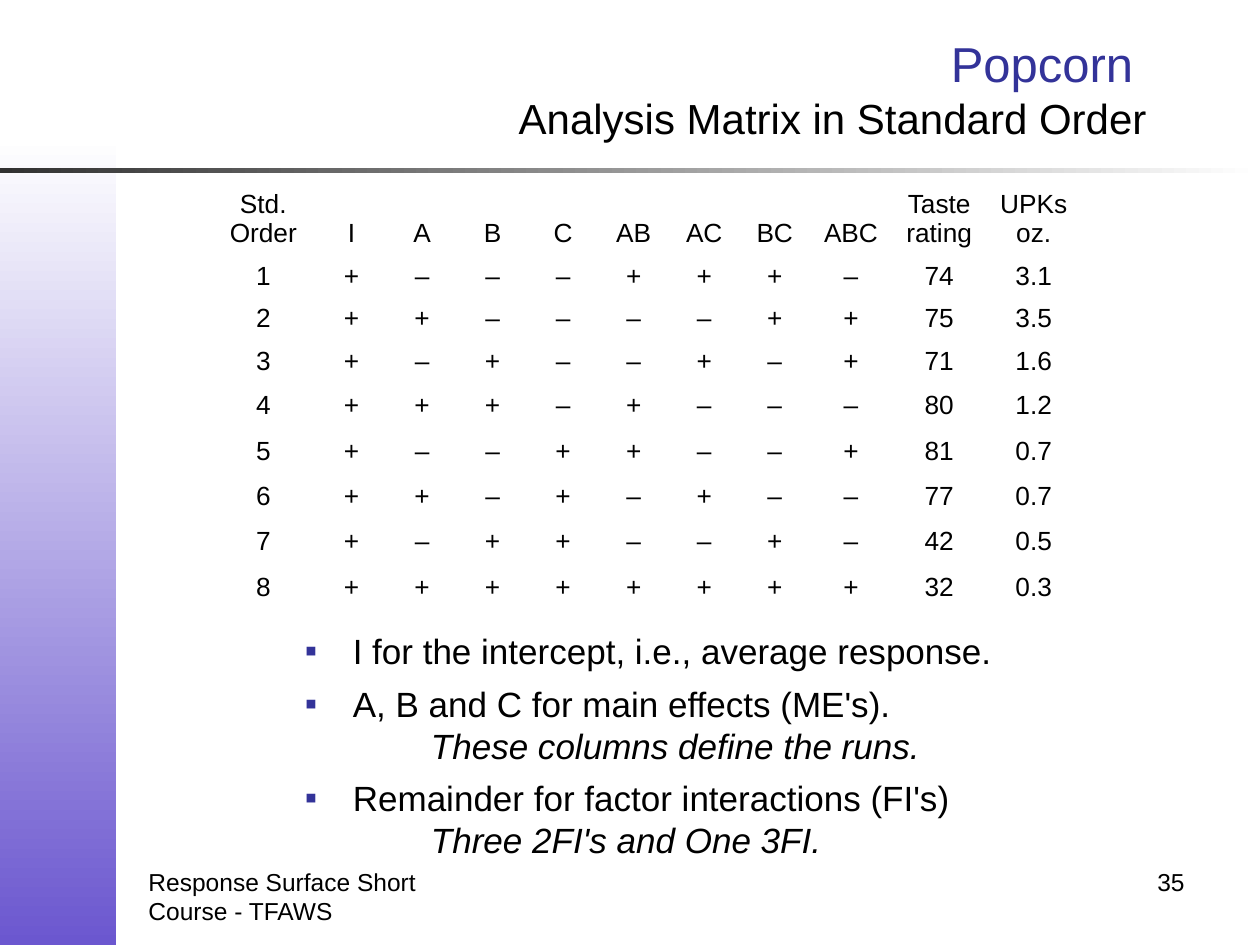
"""Builds the popcorn analysis matrix slide."""
from lxml import etree
from pptx import Presentation
from pptx import util as u
from pptx.dml.color import RGBColor
from pptx.enum import shapes, text
from pptx.oxml import ns

COLORS = {"ink": "000000", "accent": "333399", "white": "FFFFFF",
          "violet": "6B57CF", "charcoal": "313131"}
EFFECTS = ["I", "A", "B", "C", "AB", "AC", "BC", "ABC"]
RESULTS = [(74, 3.1), (75, 3.5), (71, 1.6), (80, 1.2),
           (81, 0.7), (77, 0.7), (42, 0.5), (32, 0.3)]
NOTES = [
    ("I for the intercept, i.e., average response.", None),
    ("A, B and C for main effects (ME's).", "These columns define the runs."),
    ("Remainder for factor interactions (FI's)", "Three 2FI's and One 3FI."),
]


def color(name):
    return RGBColor.from_string(COLORS[name])


def sign(run, effect):
    """Return the sign of an effect: the product of its factors' levels."""
    lows = sum(not run >> "ABC".index(factor) & 1 for factor in effect if factor != "I")
    return "–" if lows % 2 else "+"


class SlideBuilder:
    """Holds the style and the slide being built."""

    font_name = "Arial"

    def __init__(self, slide):
        self.slide = slide

    def style(self, font, size, name="ink", italic=None):
        font.name, font.size, font.italic = self.font_name, u.Pt(size), italic
        font.color.rgb = color(name)

    def place(self, shape, box):
        shape.left, shape.top, shape.width, shape.height = map(u.Inches, box)

    def gradient(self, box, start, end, angle):
        shape = self.slide.shapes.add_shape(
            shapes.MSO_SHAPE.RECTANGLE, *map(u.Inches, box))
        shape.shadow.inherit = False
        shape.line.fill.background()
        shape.fill.gradient()
        shape.fill.gradient_angle = angle
        for stop, name in zip(shape.fill.gradient_stops, (start, end)):
            stop.color.rgb = color(name)

    def title(self, box, heading, subtitle):
        shape = self.slide.shapes.title
        self.place(shape, box)
        shape.text_frame.vertical_anchor = text.MSO_ANCHOR.MIDDLE
        paragraph = shape.text_frame.paragraphs[0]
        paragraph.alignment = text.PP_ALIGN.RIGHT
        run = paragraph.add_run()
        run.text = heading
        self.style(run.font, 28, "accent")
        paragraph.add_line_break()
        run = paragraph.add_run()
        run.text = subtitle
        self.style(run.font, 24)

    def label(self, box, words, alignment):
        frame = self.slide.shapes.add_textbox(*map(u.Inches, box)).text_frame
        frame.word_wrap = True
        paragraph = frame.paragraphs[0]
        paragraph.text, paragraph.alignment = words, alignment
        self.style(paragraph.font, 14)

    def note(self, paragraph, words, left, bullet, before):
        paragraph.text = words
        properties = paragraph._p.get_or_add_pPr()
        properties.set("marL", str(u.Inches(left)))
        properties.set("indent", str(u.Inches(-left if bullet else 0)))
        if bullet:
            bullet_color = etree.SubElement(properties, ns.qn("a:buClr"))
            etree.SubElement(bullet_color, ns.qn("a:srgbClr"), val=COLORS["accent"])
            etree.SubElement(properties, ns.qn("a:buFont"), typeface=self.font_name)
            etree.SubElement(properties, ns.qn("a:buChar"), char="▪")
        else:
            etree.SubElement(properties, ns.qn("a:buNone"))
        paragraph.space_before = u.Pt(before)
        paragraph.line_spacing = u.Pt(24)
        self.style(paragraph.font, 20, italic=not bullet)

    def notes(self, box, items):
        body = self.slide.placeholders[1]
        self.place(body, box)
        frame = body.text_frame
        frame.vertical_anchor = text.MSO_ANCHOR.MIDDLE
        frame.margin_left = u.Inches(0.75)
        frame.margin_top = frame.margin_right = frame.margin_bottom = 0
        for index, (main, detail) in enumerate(items):
            paragraph = frame.add_paragraph() if index else frame.paragraphs[0]
            self.note(paragraph, main, 0.38, True, 6 if index else 0)
            if detail:
                self.note(frame.add_paragraph(), detail, 1, False, 0)

    def cell(self, cell, words, header):
        cell.text = words
        cell.fill.background()
        cell.margin_left = cell.margin_right = u.Inches(0.1)
        cell.margin_top = 0
        cell.margin_bottom = u.Inches(0.06 if header else 0)
        cell.vertical_anchor = (
            text.MSO_ANCHOR.BOTTOM if header else text.MSO_ANCHOR.MIDDLE)
        for paragraph in cell.text_frame.paragraphs:
            paragraph.alignment = text.PP_ALIGN.CENTER
            self.style(paragraph.font, 15)

    def table(self, box, rows, widths, heights):
        table = self.slide.shapes.add_table(
            len(rows), len(widths), *map(u.Inches, box)).table
        table.first_row = table.horz_banding = False
        for column, width in zip(table.columns, widths):
            column.width = u.Inches(width)
        for index, (row, height) in enumerate(zip(rows, heights)):
            table.rows[index].height = u.Inches(height)
            for cell, words in zip(table.rows[index].cells, row):
                self.cell(cell, words, index == 0)


def main():
    presentation = Presentation()
    presentation.slide_width, presentation.slide_height = u.Inches(10), u.Inches(7.5)
    builder = SlideBuilder(presentation.slides.add_slide(presentation.slide_layouts[1]))
    builder.gradient((0, 1.08, 0.92, 6.42), "white", "violet", 270)
    builder.gradient((0, 1.33, 10, 0.04), "charcoal", "white", 0)
    builder.title((2, 0.1, 7.2, 1.2), "Popcorn ", "Analysis Matrix in Standard Order")
    rows = [["Std.\nOrder", *EFFECTS, "Taste rating", "UPKs\noz."]]
    for run, (taste, kernels) in enumerate(RESULTS):
        signs = [sign(run, effect) for effect in EFFECTS]
        rows.append([str(run + 1), *signs, str(taste), str(kernels)])
    builder.table((1.67, 1.42, 6.9, 3.42), rows,
                  [0.84] + [0.56] * 7 + [0.65, 0.75, 0.75],
                  [0.61, 0.33, 0.33, 0.35] + [0.36] * 5)
    builder.notes((1.67, 4.98, 7.25, 1.87), NOTES)
    builder.label((1.08, 6.83, 2.33, 0.52), "Response Surface Short Course - TFAWS",
                  text.PP_ALIGN.LEFT)
    builder.label((7.17, 6.83, 2.33, 0.52), "35", text.PP_ALIGN.RIGHT)
    presentation.save("out.pptx")


if __name__ == "__main__":
    main()
